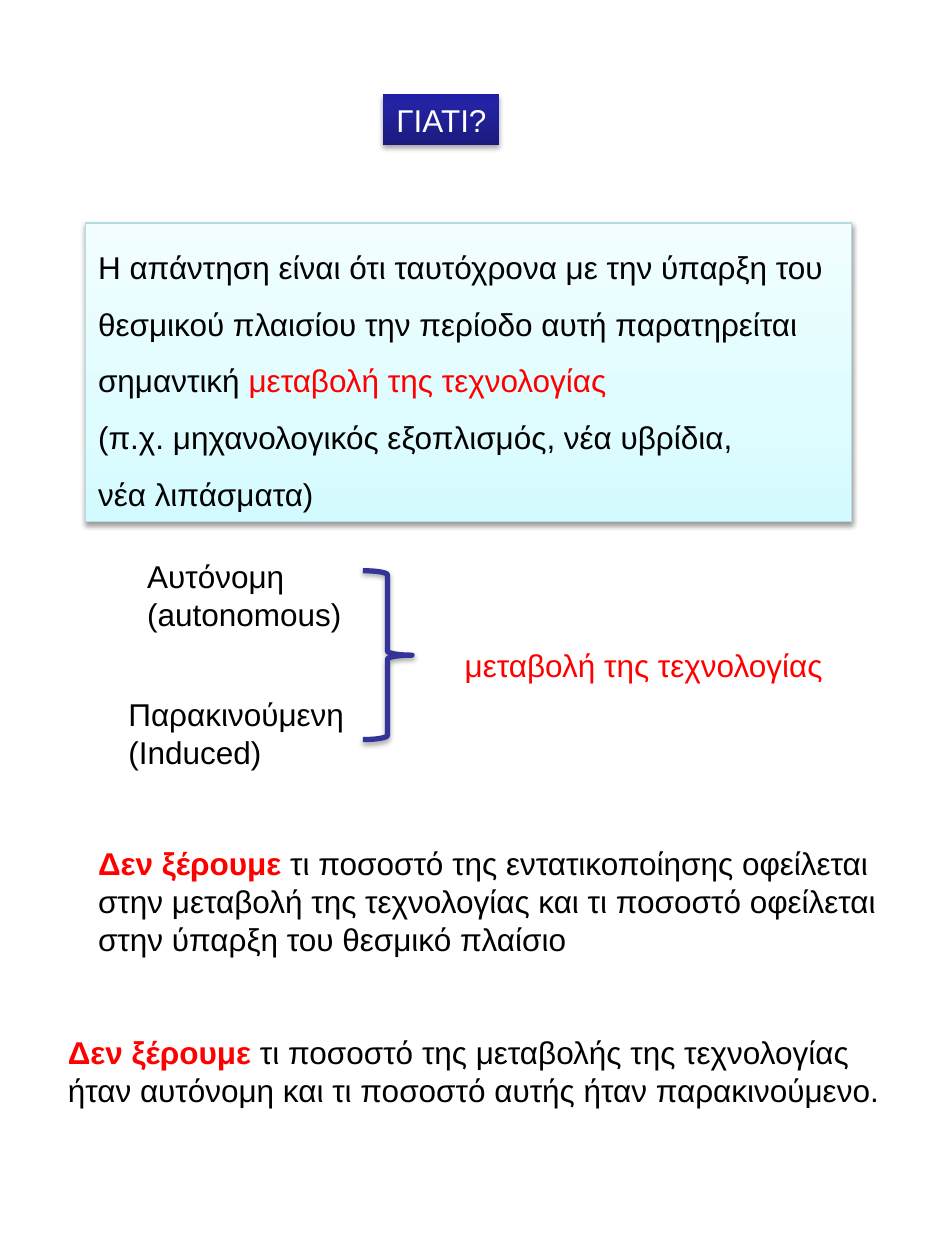
import copy
from dataclasses import dataclass

import lxml.etree
import pptx
import pptx.dml.color
import pptx.enum.shapes
import pptx.enum.text
import pptx.oxml.ns
import pptx.util
from pptx.util import Inches, Pt

BLACK, RED, WHITE, NAVY = "000000", "FF0000", "FFFFFF", "333399"
qn = pptx.oxml.ns.qn
MSO_SHAPE = pptx.enum.shapes.MSO_SHAPE
ALIGN = pptx.enum.text.PP_ALIGN


@dataclass
class Span:
    text: str
    color: str = BLACK
    bold: bool = False


@dataclass
class TextBlock:
    place: tuple[float, float, float, float]
    paras: list[list[Span]]
    align: ALIGN = ALIGN.LEFT
    spacing: float = 1.0


@dataclass
class Panel:
    block: TextBlock
    stops: list[tuple[float, str]]
    shadow: tuple[int, float]
    border: str | None = None


def rgb(color: str) -> pptx.dml.color.RGBColor:
    return pptx.dml.color.RGBColor.from_string(color)


def write_text(shape, block: TextBlock) -> None:
    frame = shape.text_frame
    frame.word_wrap = False
    frame.auto_size = pptx.enum.text.MSO_AUTO_SIZE.SHAPE_TO_FIT_TEXT
    frame.vertical_anchor = pptx.enum.text.MSO_ANCHOR.TOP
    for index, spans in enumerate(block.paras):
        para = frame.add_paragraph() if index else frame.paragraphs[0]
        para.alignment = block.align
        para.line_spacing = block.spacing
        for span in spans:
            run = para.add_run()
            run.text = span.text
            run.font.name = "Arial"
            run.font.size = Pt(18)
            run.font.bold = span.bold
            run.font.color.rgb = rgb(span.color)


def add_shadow(shape, opacity: int, distance: float) -> None:
    """Cast a soft black shadow straight down."""
    shape.shadow.inherit = False
    effects = shape._element.spPr.find(qn("a:effectLst"))
    outer = lxml.etree.SubElement(
        effects, qn("a:outerShdw"), blurRad=str(Pt(3.1)), dist=str(Pt(distance)),
        dir="5400000", rotWithShape="0")
    color = lxml.etree.SubElement(outer, qn("a:srgbClr"), val=BLACK)
    lxml.etree.SubElement(color, qn("a:alpha"), val=str(opacity * 1000))


def fill_upward(shape, stops: list[tuple[float, str]]) -> None:
    """Fill with a three-stop gradient running from bottom to top."""
    shape.fill.gradient()
    shape.fill.gradient_angle = 90
    stop_list = shape._element.spPr.find(qn("a:gradFill")).find(qn("a:gsLst"))
    stop_list.append(copy.deepcopy(stop_list[-1]))
    for stop, (position, color) in zip(shape.fill.gradient_stops, stops):
        stop.position = position
        stop.color.rgb = rgb(color)


def add_text(page, block: TextBlock) -> None:
    write_text(page.shapes.add_textbox(*map(Inches, block.place)), block)


def add_panel(page, panel: Panel) -> None:
    shape = page.shapes.add_shape(MSO_SHAPE.RECTANGLE, *map(Inches, panel.block.place))
    fill_upward(shape, panel.stops)
    if panel.border:
        shape.line.color.rgb = rgb(panel.border)
        shape.line.width = Pt(0.75)
    else:
        shape.line.fill.background()
    add_shadow(shape, *panel.shadow)
    write_text(shape, panel.block)


def add_brace(page, place: tuple[float, float, float, float]) -> None:
    brace = page.shapes.add_shape(MSO_SHAPE.RIGHT_BRACE, *map(Inches, place))
    brace.fill.background()
    brace.line.color.rgb = rgb(NAVY)
    brace.line.width = Pt(3)
    add_shadow(brace, 35, 1.8)


TECHNOLOGY = Span("μεταβολή της τεχνολογίας", RED)
UNKNOWN = Span("Δεν ξέρουμε ", RED, True)

QUESTION = Panel(
    TextBlock((3.04, 0.75, 0.92, 0.4), [[Span("ΓΙΑΤΙ?", WHITE)]], ALIGN.RIGHT),
    [(0, "1B1B7E"), (0.8, "2323A3"), (1, "2020A6")], (35, 1.8))

ANSWER = Panel(
    TextBlock((0.68, 1.77, 6.08, 2.37), [
        [Span("Η απάντηση είναι ότι ταυτόχρονα με την ύπαρξη του")],
        [Span("θεσμικού πλαισίου την περίοδο αυτή παρατηρείται")],
        [Span("σημαντική "), TECHNOLOGY],
        [Span("(π.χ. μηχανολογικός εξοπλισμός, νέα υβρίδια,")],
        [Span("νέα λιπάσματα)")],
    ], spacing=1.5),
    [(0, "D3FBFF"), (0.35, "DFFCFF"), (1, "F2FEFF")], (38, 1.6), "B6DCDF")

KINDS_OF_CHANGE = [
    TextBlock((1.07, 4.37, 1.76, 0.71), [[Span("Αυτόνομη")], [Span("(autonomous)")]]),
    TextBlock((0.92, 5.47, 1.92, 0.71), [[Span("Παρακινούμενη")], [Span("(Induced)")]]),
]

CONCLUSIONS = [
    TextBlock((3.59, 5.08, 3.07, 0.4), [[TECHNOLOGY]]),
    TextBlock((0.68, 6.65, 6.49, 1.01), [
        [UNKNOWN, Span("τι ποσοστό της εντατικοποίησης οφείλεται")],
        [Span("στην μεταβολή της τεχνολογίας και τι ποσοστό οφείλεται")],
        [Span("στην ύπαρξη του θεσμικό πλαίσιο")],
    ]),
    TextBlock((0.44, 8.15, 6.7, 1.01), [
        [UNKNOWN, Span("τι ποσοστό της μεταβολής της τεχνολογίας")],
        [Span("ήταν αυτόνομη και τι ποσοστό αυτής ήταν παρακινούμενο.")],
    ]),
]


def main() -> None:
    deck = pptx.Presentation()
    deck.slide_width, deck.slide_height = Inches(7.5), Inches(10)
    page = deck.slides.add_slide(deck.slide_layouts[6])

    # Question and answer
    for panel in (QUESTION, ANSWER):
        add_panel(page, panel)

    # Two kinds of change, joined by a brace
    for block in KINDS_OF_CHANGE:
        add_text(page, block)
    add_brace(page, (2.88, 4.53, 0.39, 1.34))

    # What they add up to, and what stays unknown
    for block in CONCLUSIONS:
        add_text(page, block)

    deck.save("out.pptx")


if __name__ == "__main__":
    main()
